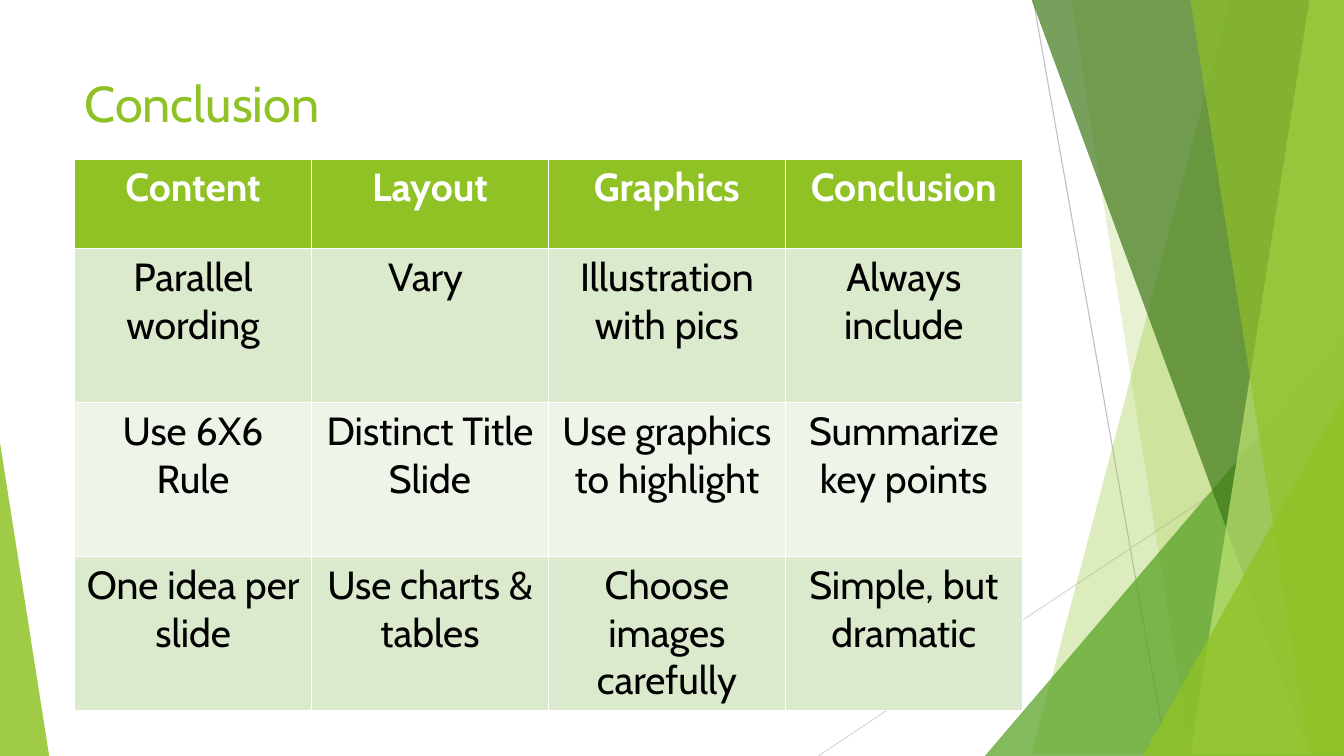
import pptx
import pptx.util
import pptx.dml.color
import pptx.enum.shapes
import pptx.enum.text
import pptx.oxml
import pptx.oxml.ns

Cm, Pt = pptx.util.Cm, pptx.util.Pt
WIDTH, HEIGHT = 33.87, 19.05
FONT = "Cabin"
GREEN = "90C226"
TITLE = "Conclusion"
ROWS = [
    ["Content", "Layout", "Graphics", "Conclusion"],
    ["Parallel wording", "Vary ", "Illustration with pics", "Always include"],
    ["Use 6X6 Rule", "Distinct Title Slide", "Use graphics to highlight", "Summarize key points"],
    ["One idea per slide", "Use charts & tables", "Choose images carefully", "Simple, but dramatic"],
]
ROW_FILLS = [GREEN, "DBE9CD", "EEF4E8", "DBE9CD"]
ROW_HEIGHTS = [2.26, 3.88, 3.88, 3.88]
LEFT, TABLE_TOP, COL_WIDTH = 1.88, 4.01, 5.97

LINES = [
    (26.04, 0, 29.41, HEIGHT, "BFBFBF"),
    (WIDTH, 10.24, 20.62, HEIGHT, "D9D9D9"),
]
FACETS = [
    ("band", (31.19, 25.5), GREEN, 30),
    ("band", (26.67, 30.05), GREEN, 20),
    ("triangle", (24.82, 8.46, WIDTH, 1), "54A021", 72),
    ("band", (25.93, 32.79), "3F7819", 70),
    ("band", (33.1, 30.28), "C0E474", 70),
    ("band", (30.38, 33.48), GREEN, 65),
    ("triangle", (28.8, 9.98, WIDTH, 1), GREEN, 80),
    ("triangle", (0, 11.15, 1.24, 0), GREEN, 85),
]


def rgb(value):
    return pptx.dml.color.RGBColor.from_string(value)


def style_text(p, size, color, bold=False):
    p.font.name = FONT
    p.font.size = Pt(size)
    p.font.bold = bold
    p.font.color.rgb = rgb(color)


def add_line(s, x1, y1, x2, y2, color):
    line = s.shapes.add_connector(
        pptx.enum.shapes.MSO_CONNECTOR.STRAIGHT, Cm(x1), Cm(y1), Cm(x2), Cm(y2))
    line.line.color.rgb = rgb(color)
    line.line.width = Pt(0.75)
    line._element.spPr.append(pptx.oxml.parse_xml(
        "<a:effectLst %s/>" % pptx.oxml.ns.nsdecls("a")))


def add_band(s, top_x, bottom_x):
    builder = s.shapes.build_freeform(top_x, 0, scale=Cm(1))
    builder.add_line_segments([(WIDTH, 0), (WIDTH, HEIGHT), (bottom_x, HEIGHT)])
    return builder.convert_to_shape()


def add_triangle(s, left, top, right, apex):
    shape = s.shapes.add_shape(
        pptx.enum.shapes.MSO_SHAPE.ISOSCELES_TRIANGLE,
        Cm(left), Cm(top), Cm(right - left), Cm(HEIGHT - top))
    shape.adjustments[0] = apex
    return shape


def paint(shape, color, opacity):
    shape.shadow.inherit = False
    shape.fill.solid()
    shape.fill.fore_color.rgb = rgb(color)
    clr = shape._element.spPr.find(".//" + pptx.oxml.ns.qn("a:srgbClr"))
    clr.append(pptx.oxml.parse_xml(
        '<a:alpha %s val="%d"/>' % (pptx.oxml.ns.nsdecls("a"), opacity * 1000)))
    shape.line.fill.background()


def add_title(s):
    title = s.shapes.title
    title.left, title.top = Cm(LEFT), Cm(1.7)
    title.width, title.height = Cm(COL_WIDTH * len(ROWS[0])), Cm(3.66)
    tf = title.text_frame
    tf.text = TITLE
    tf.vertical_anchor = pptx.enum.text.MSO_ANCHOR.TOP
    p = tf.paragraphs[0]
    p.alignment = pptx.enum.text.PP_ALIGN.LEFT
    style_text(p, 36, GREEN)


def add_grid(s):
    table = s.shapes.add_table(
        len(ROWS), len(ROWS[0]), Cm(LEFT), Cm(TABLE_TOP),
        Cm(COL_WIDTH * len(ROWS[0])), Cm(sum(ROW_HEIGHTS))).table
    for column in table.columns:
        column.width = Cm(COL_WIDTH)
    for i, texts in enumerate(ROWS):
        table.rows[i].height = Cm(ROW_HEIGHTS[i])
        header = i == 0
        for j, text in enumerate(texts):
            cell = table.cell(i, j)
            cell.fill.solid()
            cell.fill.fore_color.rgb = rgb(ROW_FILLS[i])
            cell.text = text
            p = cell.text_frame.paragraphs[0]
            p.alignment = pptx.enum.text.PP_ALIGN.CENTER
            style_text(p, 28, "FFFFFF" if header else "000000", header)


def main():
    prs = pptx.Presentation()
    prs.slide_width, prs.slide_height = Cm(WIDTH), Cm(HEIGHT)
    s = prs.slides.add_slide(prs.slide_layouts[5])
    for line in LINES:
        add_line(s, *line)
    builders = {"band": add_band, "triangle": add_triangle}
    for kind, geometry, color, opacity in FACETS:
        paint(builders[kind](s, *geometry), color, opacity)
    add_title(s)
    add_grid(s)
    prs.save("out.pptx")


if __name__ == "__main__":
    main()
